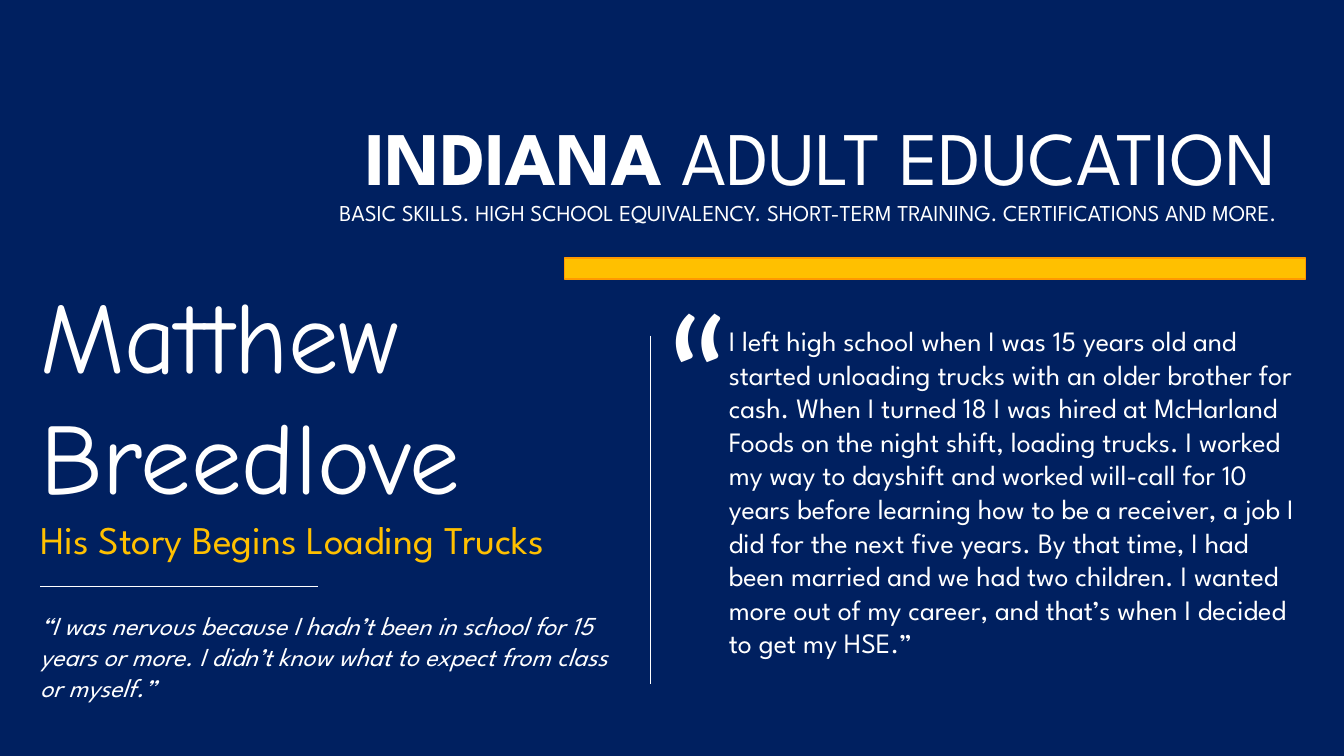
from pptx import Presentation
from pptx.dml.color import RGBColor
from pptx.enum import shapes, text
from pptx.oxml import ns, xmlchemy
from pptx.util import Inches, Pt

NAVY = RGBColor(0x00, 0x20, 0x60)
GOLD = RGBColor(0xFF, 0xC0, 0x00)
ORANGE = RGBColor(0xFF, 0x99, 0x00)
WHITE = RGBColor(0xFF, 0xFF, 0xFF)
SANS, HAND, MARK = "League Spartan", "Comic Neue", "Lato"


def write(paragraph, words, size, font=SANS, color=WHITE, bold=False, italic=False):
    """Append a formatted run to a paragraph."""
    run = paragraph.add_run()
    run.text = words
    run.font.size = Pt(size)
    run.font.name = font
    run.font.color.rgb = color
    run.font.bold = bold
    run.font.italic = italic


def add_frame(slide, left, top, width, height, wrap=True):
    """Add a text box that grows with its text and return its frame."""
    frame = slide.shapes.add_textbox(
        Inches(left), Inches(top), Inches(width), Inches(height)).text_frame
    frame.word_wrap = wrap
    frame.auto_size = text.MSO_AUTO_SIZE.SHAPE_TO_FIT_TEXT
    return frame


def add_rule(slide, x1, y1, x2, y2):
    """Draw a thin white line without a shadow."""
    rule = slide.shapes.add_connector(
        shapes.MSO_CONNECTOR.STRAIGHT, Inches(x1), Inches(y1), Inches(x2), Inches(y2))
    rule.line.color.rgb = WHITE
    rule.line.width = Pt(0.75)
    rule._element.spPr.append(xmlchemy.OxmlElement("a:effectLst"))


def add_header(slide, left, top, width, height):
    """Place the programme title, its tagline and the gold bar below."""
    title = slide.shapes.title
    title.left, title.top = Inches(left), Inches(top)
    title.width, title.height = Inches(width), Inches(height)
    frame = title.text_frame
    frame.word_wrap = True
    frame.auto_size = text.MSO_AUTO_SIZE.NONE
    frame.vertical_anchor = text.MSO_ANCHOR.MIDDLE
    frame.margin_bottom = Inches(0.29)
    heading = frame.paragraphs[0]
    heading.alignment = text.PP_ALIGN.RIGHT
    heading.line_spacing = 0.9
    write(heading, "INDIANA", 54, bold=True)
    write(heading, " ADULT EDUCATION", 54)
    heading.add_line_break()
    write(heading, "BASIC SKILLS. HIGH SCHOOL EQUIVALENCY. SHORT-TERM TRAINING. "
          "CERTIFICATIONS AND MORE.", 16.2)

    bar = slide.shapes.add_shape(
        shapes.MSO_SHAPE.RECTANGLE, Inches(left + 3.83), Inches(top + height + 0.02),
        Inches(7.35), Inches(0.21))
    bar.shadow.inherit = False
    bar.fill.solid()
    bar.fill.fore_color.rgb = GOLD
    bar.line.color.rgb = ORANGE
    bar.line.width = Pt(1)


def add_profile(slide, left, top, width, height):
    """Place the student's name, story heading and short quote."""
    frame = add_frame(slide, left, top, width, height)
    first_name = frame.paragraphs[0]
    write(first_name, "Matthew", 72, font=HAND)
    write(frame.add_paragraph(), "Breedlove", 72, font=HAND)
    write(frame.add_paragraph(), "His Story Begins Loading Trucks", 28, color=GOLD)
    quote = frame.add_paragraph()
    quote.space_before = Pt(34)
    write(quote, "“I was nervous because I hadn’t been in school for 15 years or more. "
          "I didn’t know what to expect from class or myself.”", 18.5, italic=True)
    rule_y = top + 3.16
    add_rule(slide, left + 0.1, rule_y, left + 2.85, rule_y)


def add_story(slide, left, top, width, height):
    """Place the divider, the large quote mark and the story."""
    add_rule(slide, left, top + 0.66, left, top + height - 0.17)
    mark = add_frame(slide, left + 0.07, top, 0.74, 2.12, wrap=False)
    write(mark.paragraphs[0], "“", 120, font=MARK)
    story = add_frame(slide, left + 0.68, top + 0.49, width - 0.68, height - 0.49)
    write(story.paragraphs[0],
          "I left high school when I was 15 years old and started unloading trucks "
          "with an older brother for cash. When I turned 18 I was hired at McHarland "
          "Foods on the night shift, loading trucks. I worked my way to dayshift and "
          "worked will-call for 10 years before learning how to be a receiver, a job "
          "I did for the next five years. By that time, I had been married and we had "
          "two children. I wanted more out of my career, and that’s when I decided to "
          "get my HSE.”", 20)


def main():
    """Build and save the student story slide."""
    deck = Presentation()
    deck.slide_width, deck.slide_height = Inches(13.33), Inches(7.5)
    slide = deck.slides.add_slide(deck.slide_layouts.get_by_name("Title Only"))
    slide.background.fill.solid()
    slide.background.fill.fore_color.rgb = NAVY
    add_header(slide, 1.77, 1.13, 10.99, 1.41)
    add_profile(slide, 0.3, 2.66, 5.92, 4.55)
    add_story(slide, 6.45, 2.67, 6.63, 4.29)
    deck.save("out.pptx")


if __name__ == "__main__":
    main()
